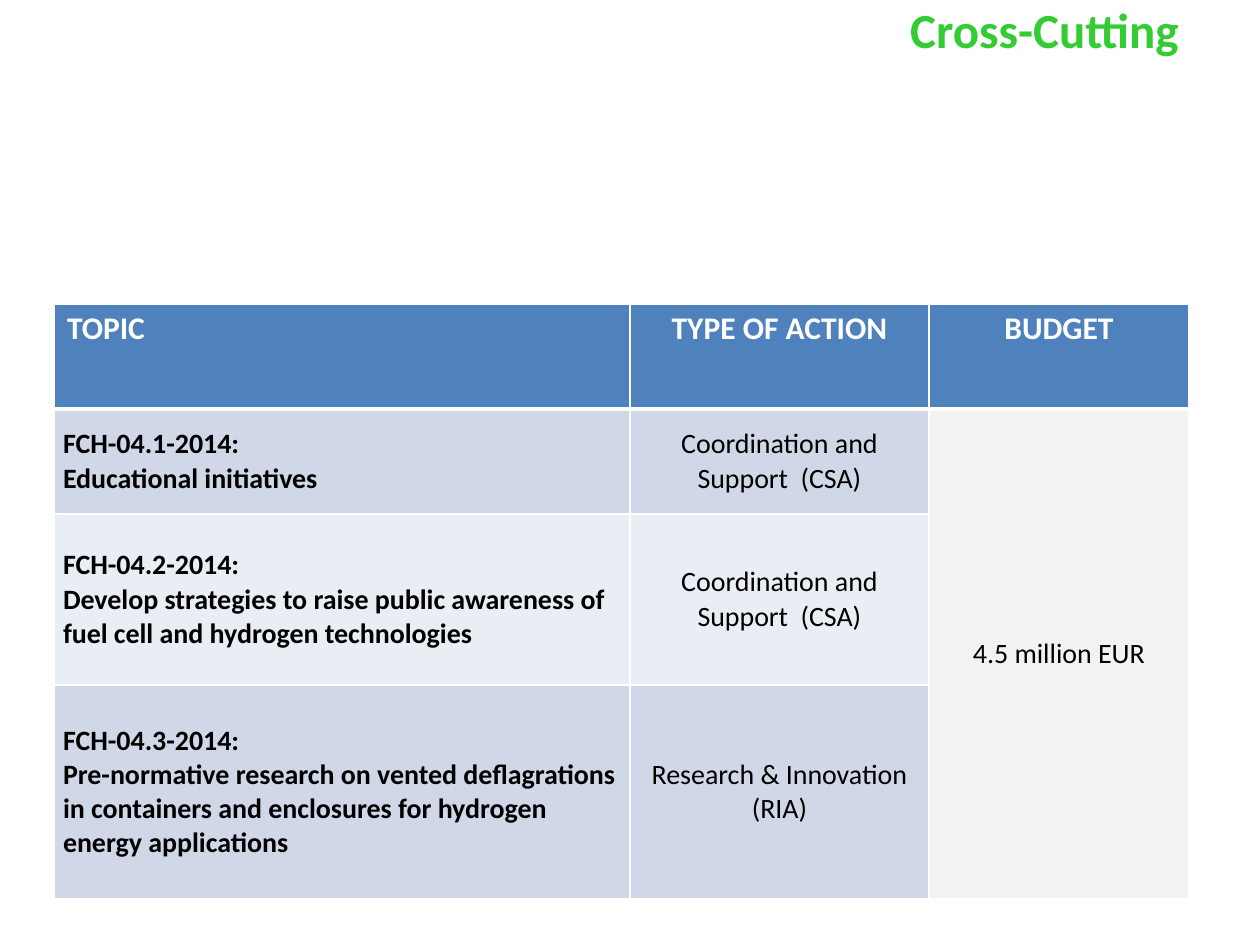
from lxml import etree
from pptx import Presentation
from pptx.dml.color import RGBColor
from pptx.enum.text import MSO_ANCHOR, PP_ALIGN
from pptx.oxml.ns import qn
from pptx.util import Emu, Pt

LEFT, CENTER, RIGHT = PP_ALIGN.LEFT, PP_ALIGN.CENTER, PP_ALIGN.RIGHT
TOP, MIDDLE = MSO_ANCHOR.TOP, MSO_ANCHOR.MIDDLE
EMU_PER_PX = 914400 / 126

TITLE = "Cross-Cutting"
HEADINGS = ["TOPIC", "TYPE OF ACTION", "BUDGET"]
TOPICS = [
    ("FCH-04.1-2014:", "Educational initiatives", "Coordination and Support  (CSA)"),
    ("FCH-04.2-2014:",
     "Develop strategies to raise public awareness of fuel cell and hydrogen technologies",
     "Coordination and Support  (CSA)"),
    ("FCH-04.3-2014:",
     "Pre-normative research on vented deflagrations in containers and enclosures "
     "for hydrogen energy applications",
     "Research & Innovation (RIA)"),
]
BUDGET = "4.5 million EUR"

WHITE, BLACK, GREEN = "FFFFFF", "000000", "33CC33"
HEADER_FILL, BUDGET_FILL = "4F81BD", "F2F2F2"
BAND_FILLS = ["D0D8E8", "E9EDF4"]

TITLE_BOX = (105, 0, 1086, 116)
TABLE_LEFT, TABLE_TOP = 54, 304
COLUMN_WIDTHS = [576, 299, 260]
ROW_HEIGHTS = [105, 105, 171, 214]

TITLE_FORMAT = {"size": Pt(28), "bold": True}
HEADING_FORMAT = {"size": Pt(18), "bold": True}
TOPIC_FORMAT = {"size": Pt(16), "bold": True}
PLAIN_FORMAT = {"size": Pt(16), "bold": False}


def px(length):
    return Emu(round(length * EMU_PER_PX))


def rgb(color):
    return RGBColor.from_string(color)


def write(frame, lines, font_format, color, alignment):
    frame.word_wrap = True
    for index, line in enumerate(lines):
        paragraph = frame.paragraphs[0] if index == 0 else frame.add_paragraph()
        paragraph.alignment = alignment
        run = paragraph.add_run()
        run.text = line
        run.font.name = "Calibri"
        run.font.color.rgb = rgb(color)
        for name, value in font_format.items():
            setattr(run.font, name, value)


def set_borders(cell, bottom_points):
    properties = cell._tc.get_or_add_tcPr()
    for side, points in (("L", 1), ("R", 1), ("T", 1), ("B", bottom_points)):
        line = etree.SubElement(properties, qn(f"a:ln{side}"), w=str(Pt(points)))
        fill = etree.SubElement(line, qn("a:solidFill"))
        etree.SubElement(fill, qn("a:srgbClr"), val=WHITE)


def style_cell(cell, fill, anchor, margins, bottom_points=1):
    """Set the look of a cell; margins are (side, top and bottom) in px."""
    set_borders(cell, bottom_points)
    cell.fill.solid()
    cell.fill.fore_color.rgb = rgb(fill)
    cell.vertical_anchor = anchor
    cell.margin_left = cell.margin_right = px(margins[0])
    cell.margin_top = cell.margin_bottom = px(margins[1])


def add_title(slide):
    frame = slide.shapes.add_textbox(*map(px, TITLE_BOX)).text_frame
    frame.vertical_anchor = TOP
    frame.margin_top = frame.margin_bottom = 0
    write(frame, [TITLE], TITLE_FORMAT, GREEN, RIGHT)


def add_topic_table(slide):
    table = slide.shapes.add_table(
        len(ROW_HEIGHTS), len(COLUMN_WIDTHS), px(TABLE_LEFT), px(TABLE_TOP),
        px(sum(COLUMN_WIDTHS)), px(sum(ROW_HEIGHTS))).table
    for column, width in zip(table.columns, COLUMN_WIDTHS):
        column.width = px(width)
    for row, height in zip(table.rows, ROW_HEIGHTS):
        row.height = px(height)

    for index, heading in enumerate(HEADINGS):
        cell = table.cell(0, index)
        style_cell(cell, HEADER_FILL, TOP, (13, 6), bottom_points=3)
        write(cell.text_frame, [heading], HEADING_FORMAT, WHITE, CENTER if index else LEFT)

    for row, (code, topic, action) in enumerate(TOPICS, start=1):
        topic_cell, action_cell, budget_cell = (table.cell(row, i) for i in range(3))
        for cell in (topic_cell, action_cell):
            style_cell(cell, BAND_FILLS[(row - 1) % 2], MIDDLE, (9, 0))
        style_cell(budget_cell, BUDGET_FILL, MIDDLE, (13, 6))
        write(topic_cell.text_frame, [code, topic], TOPIC_FORMAT, BLACK, LEFT)
        write(action_cell.text_frame, [action], PLAIN_FORMAT, BLACK, CENTER)

    budget = table.cell(1, 2)
    budget.merge(table.cell(len(TOPICS), 2))
    write(budget.text_frame, [BUDGET], PLAIN_FORMAT, BLACK, CENTER)


def main():
    presentation = Presentation()
    presentation.slide_width, presentation.slide_height = px(1260), px(945)
    slide = presentation.slides.add_slide(presentation.slide_layouts[6])
    add_title(slide)
    add_topic_table(slide)
    presentation.save("out.pptx")


if __name__ == "__main__":
    main()
